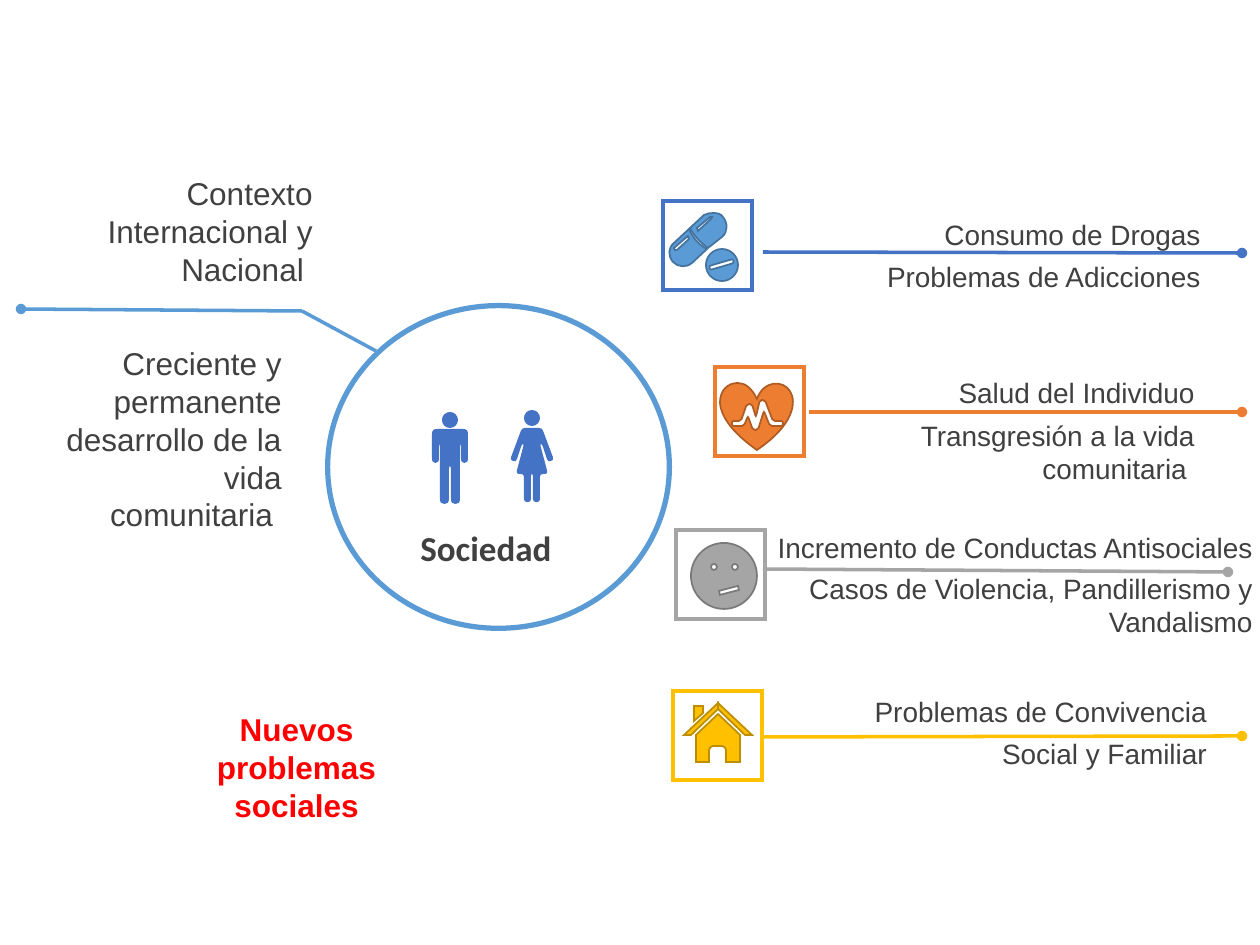
"""Builds the slide on new social problems around society."""
from math import dist

from lxml.etree import SubElement
from pptx import Presentation
from pptx.dml.color import RGBColor
from pptx.enum.shapes import MSO_CONNECTOR, MSO_SHAPE
from pptx.enum.text import MSO_AUTO_SIZE, PP_ALIGN
from pptx.oxml.ns import qn
from pptx.util import Emu, Pt

PX = 914400 / 126
BLUE, LIGHT_BLUE, ORANGE = "4472C4", "5B9BD5", "ED7D31"
GREY, GOLD, TEXT, RED, WHITE = "A5A5A5", "FFC000", "404040", "FF0000", "FFFFFF"


def px(value):
    return Emu(round(value * PX))


def rgb(color):
    return RGBColor.from_string(color)


def circle(cx, cy, r):
    k = 0.55 * r
    return [(cx + r, cy),
            (cx + r, cy + k, cx + k, cy + r, cx, cy + r),
            (cx - k, cy + r, cx - r, cy + k, cx - r, cy),
            (cx - r, cy - k, cx - k, cy - r, cx, cy - r),
            (cx + k, cy - r, cx + r, cy - k, cx + r, cy)]


def flip(points, axis):
    return [(2 * axis - x, y) for x, y in reversed(points)]


def between(a, b, share):
    return tuple(p + (q - p) * share for p, q in zip(a, b))


def rounded(points, radius):
    contour = []
    for i, corner in enumerate(points):
        start, end = (between(corner, other, min(radius / dist(corner, other), 0.5))
                      for other in (points[i - 1], points[(i + 1) % len(points)]))
        contour += [start, between(start, corner, 0.67) + between(end, corner, 0.67) + end]
    return contour


class Board:
    """Holds the text style and the slide being drawn; a contour mixes points and cubic curves."""

    def __init__(self, slide, font="Arial", color=TEXT):
        self.shapes = slide.shapes
        self.font, self.color = font, color

    def paint(self, shape, fill, line=None, width=2):
        shape.shadow.inherit = False
        shape.fill.solid()
        shape.fill.fore_color.rgb = rgb(fill)
        if line:
            shape.line.color.rgb = rgb(line)
            shape.line.width = Pt(width)
            SubElement(shape.line._get_or_add_ln(), qn("a:miter"), lim="800000")
        else:
            shape.line.fill.background()

    def frame(self, x, y, color, side=89):
        square = self.shapes.add_shape(MSO_SHAPE.RECTANGLE, px(x), px(y), px(side), px(side))
        self.paint(square, WHITE, color)

    def ring(self, x, y, w, h, color):
        ring = self.shapes.add_shape(MSO_SHAPE.DONUT, px(x), px(y), px(w), px(h))
        ring.adjustments[0] = 0.016
        self.paint(ring, color)

    def line(self, start, end, color, dot=True):
        line = self.shapes.add_connector(MSO_CONNECTOR.STRAIGHT, *map(px, start + end))
        line.line.color.rgb = rgb(color)
        line.line.width = Pt(2)
        if dot:
            SubElement(line.line._get_or_add_ln(), qn("a:tailEnd"), type="oval")
        SubElement(line._element.spPr, qn("a:effectLst"))

    def text(self, words, x, y, w, h, size=16, align=PP_ALIGN.RIGHT,
             color=None, font=None, bold=False):
        frame = self.shapes.add_textbox(px(x), px(y), px(w), px(h)).text_frame
        frame.word_wrap = True
        frame.auto_size = MSO_AUTO_SIZE.SHAPE_TO_FIT_TEXT
        paragraph = frame.paragraphs[0]
        paragraph.text = words
        paragraph.alignment = align
        paragraph.font.name = font or self.font
        paragraph.font.size = Pt(size)
        paragraph.font.bold = bold
        paragraph.font.color.rgb = rgb(color or self.color)

    def icon(self, contours, fill, line=None):
        builder = self.shapes.build_freeform(*map(px, contours[0][0]), scale=1.0)
        for contour in contours:
            if contour is not contours[0]:
                builder.move_to(*map(px, contour[0]))
            builder.add_line_segments([(px(step[n]), px(step[n + 1])) for step in contour[1:]
                                       for n in range(0, len(step), 2)])
        shape = builder.convert_to_shape()
        self.bend(shape, [step for contour in contours for step in contour[1:]])
        self.paint(shape, fill, line, 1)

    def bend(self, shape, steps):
        segments = iter(list(shape._element.iter(qn("a:lnTo"))))
        for step in steps:
            segment = next(segments)
            if len(step) == 6:
                segment.tag = qn("a:cubicBezTo")
                for _ in range(2):
                    extra = next(segments)
                    segment.append(extra[0])
                    extra.getparent().remove(extra)


def draw_people(board):
    man = [(468, 429), (468, 463), (461, 463), (461, 444), (460, 444),
           (460, 504), (451, 504), (451, 466)]
    woman = [(542, 428), (554, 460), (548, 462), (542, 444), (540, 444), (548, 474),
             (540, 474), (540, 502), (533, 502), (533, 474)]
    for half, axis, head, radius in ((man, 450, 420, 5), (woman, 532, 418, 3)):
        body = rounded(half + flip(half, axis), radius)
        board.icon([body, circle(axis, head, 8)], BLUE)


def draw_icons(board):
    lower_half = [(689, 229), (693, 238, 699, 245, 707, 249), (692, 263),
                  (686, 268, 678, 267, 673, 262), (668, 256, 668, 248, 674, 243)]
    upper_half = [(714, 213), (718, 213, 721, 214, 723, 217),
                  (728, 223, 728, 232, 722, 237), (708, 248),
                  (701, 243, 694, 236, 690, 228), (704, 215),
                  (707, 213, 711, 213, 714, 213)]
    lower_shine = [(688, 236), (674, 248), (675, 250), (677, 250), (689, 239)]
    upper_shine = [(710, 217), (697, 228), (698, 231), (711, 219), (712, 217)]
    groove = rounded([(733, 259), (709, 266), (710, 270), (734, 263)], 2)
    board.icon([groove, circle(722, 265, 16), lower_shine, lower_half,
                upper_shine, upper_half], LIGHT_BLUE, "43739E")

    heart = [(738, 383), (745, 383, 752, 388, 757, 399),
             (764, 380, 783, 380, 790, 391), (797, 402, 794, 425, 757, 450),
             (730, 431, 721, 415, 720, 403), (720, 390, 728, 383, 738, 383)]
    pulse = rounded([(732, 421), (741, 421), (747, 404), (752, 404), (756, 417),
                     (760, 400), (765, 400), (773, 421), (783, 421), (783, 426),
                     (770, 426), (764, 411), (758, 430), (753, 430), (748, 416),
                     (744, 426), (732, 426)], 2)
    board.icon([pulse, heart], ORANGE, "AF5C24")

    mouth = [(738, 586), (719, 591), (720, 595), (739, 590)]
    board.icon([mouth, circle(735, 567, 3), circle(714, 567, 3), circle(724, 576, 33)],
               GREY, "7A7A7A")

    walls = [(718, 714), (740, 735), (740, 762), (726, 762), (726, 750),
             (726, 748, 724, 746, 722, 746), (713, 746),
             (711, 746, 709, 748, 709, 750), (709, 762), (696, 762), (696, 735)]
    chimney = [(694, 706), (703, 706), (703, 713), (694, 721)]
    eave = [(718, 703), (752, 735), (745, 735), (718, 709)]
    board.icon([walls, chimney, eave, flip(eave, 718)], GOLD, "BD8E00")


def main():
    deck = Presentation()
    deck.slide_width, deck.slide_height = px(1260), px(945)
    board = Board(deck.slides.add_slide(deck.slide_layouts[6]))

    problems = [
        (BLUE, (663, 201), (763, 252), (1242, 253),
         ("Consumo de Drogas", 864, 211, 349, 47),
         ("Problemas de Adicciones", 864, 253, 349, 47)),
        (ORANGE, (715, 367), (809, 412), (1242, 412),
         ("Salud del Individuo", 858, 369, 349, 47),
         ("Transgresión a la vida comunitaria ", 859, 412, 348, 81)),
        (GREY, (676, 530), (763, 569), (1228, 572),
         ("Incremento de Conductas Antisociales", 763, 524, 502, 47),
         ("Casos de Violencia, Pandillerismo y Vandalismo", 794, 565, 471, 81)),
        (GOLD, (673, 691), (763, 737), (1242, 736),
         ("Problemas de Convivencia ", 753, 688, 474, 47),
         ("Social y Familiar ", 755, 730, 472, 47)),
    ]
    for color, corner, start, end, title, detail in problems:
        board.frame(*corner, color)
        board.line(start, end, color)
        board.text(*detail)
        board.text(*title)

    board.ring(325, 303, 347, 328, LIGHT_BLUE)
    board.line((302, 311), (21, 309), LIGHT_BLUE)
    board.line((302, 311), (376, 351), LIGHT_BLUE, dot=False)
    board.text("Nuevos problemas sociales", 163, 704, 267, 127, 18, PP_ALIGN.CENTER,
               RED, bold=True)
    board.text("Sociedad ", 390, 520, 200, 55, 20, PP_ALIGN.CENTER, font="Calibri", bold=True)
    draw_people(board)
    board.text("Contexto Internacional y Nacional ", 21, 168, 304, 127, 18)
    board.text("Creciente y permanente desarrollo de la vida comunitaria ",
               42, 338, 252, 204, 18)
    draw_icons(board)
    deck.save("out.pptx")


if __name__ == "__main__":
    main()
